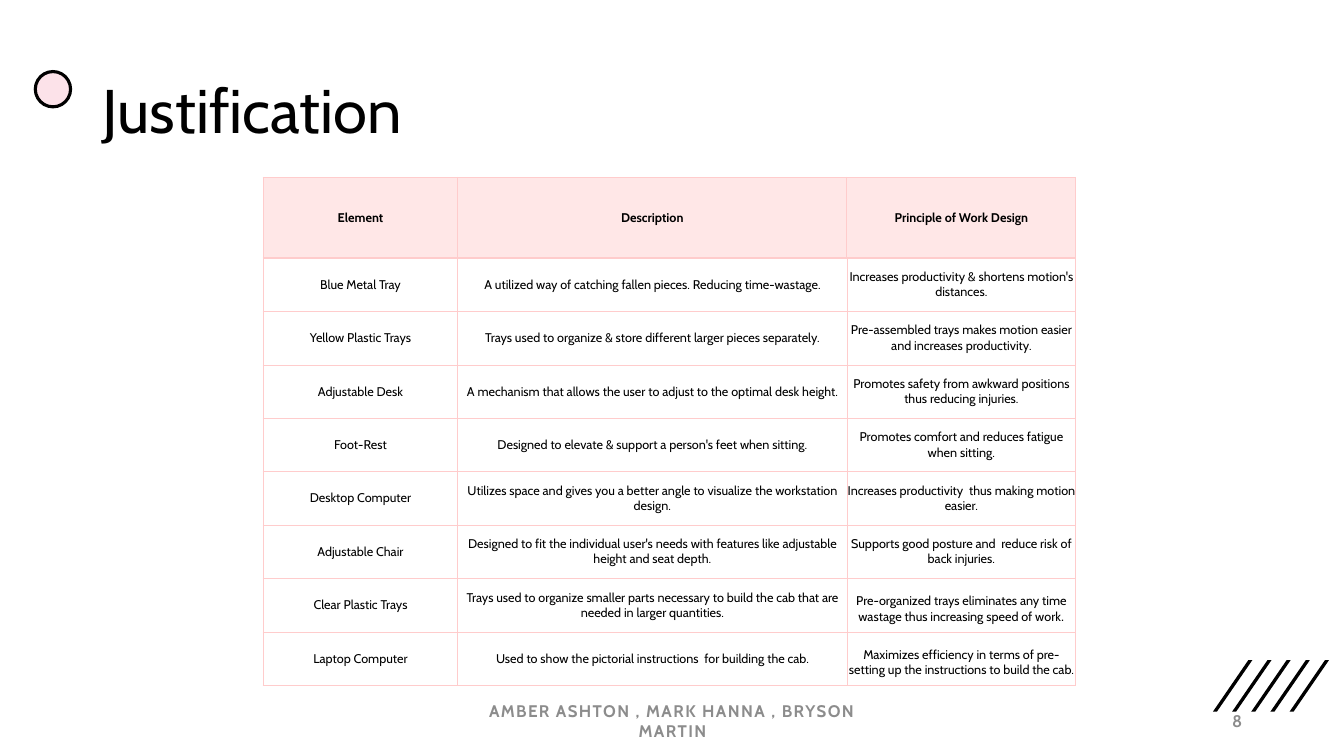
import pptx
import pptx.dml.color
import pptx.enum.shapes
import pptx.enum.text
import pptx.oxml
import pptx.oxml.ns
import pptx.util

PX = 9144  # 100 px to the inch
PINK_LINE = "FFCCCC"
MIDDLE = pptx.enum.text.MSO_ANCHOR.MIDDLE
TOP = pptx.enum.text.MSO_ANCHOR.TOP
LEFT, CENTER, RIGHT = (pptx.enum.text.PP_ALIGN.LEFT, pptx.enum.text.PP_ALIGN.CENTER,
                       pptx.enum.text.PP_ALIGN.RIGHT)


def rgb(color):
    return pptx.dml.color.RGBColor.from_string(color)


def add_run(paragraph, text, size, color="000000", bold=False, font="Cabin"):
    run = paragraph.add_run()
    run.text = text
    run.font.name = font
    run.font.size = pptx.util.Pt(size)
    run.font.bold = bold
    run.font.color.rgb = rgb(color)
    return run


deck = pptx.Presentation()
deck.slide_width, deck.slide_height = 1333 * PX, 750 * PX
slide = deck.slides.add_slide(deck.slide_layouts[6])
shapes = slide.shapes

# Slanted stripes in the lower right corner
for left in range(1203, 1203 + 5 * 19, 19):
    outline = shapes.build_freeform(left + 4, 706, scale=PX)
    outline.add_line_segments([(left, 706), (left + 35, 655), (left + 39, 655)], close=True)
    stripe = outline.convert_to_shape()
    stripe.shadow.inherit = False
    stripe.fill.solid()
    stripe.fill.fore_color.rgb = rgb("000000")
    stripe.line.fill.background()

dot = shapes.add_shape(pptx.enum.shapes.MSO_SHAPE.OVAL, 35 * PX, 71 * PX, 35 * PX, 35 * PX)
dot.shadow.inherit = False
dot.fill.solid()
dot.fill.fore_color.rgb = rgb("FCE2E9")
dot.line.color.rgb = rgb("000000")
dot.line.width = pptx.util.Pt(2.25)

# Title, footer and slide number
labels = [
    ("Justification", (92, 40, 1150, 145), LEFT, 44, "000000", False),
    ("AMBER ASHTON , MARK HANNA , BRYSON MARTIN", (442, 695, 450, 40), CENTER, 12, "8C8C8C", True),
    ("8", (942, 695, 300, 40), RIGHT, 12, "8C8C8C", True),
]
for text, box, align, size, color, is_footer in labels:
    frame = shapes.add_textbox(*(length * PX for length in box)).text_frame
    frame.word_wrap = True
    frame.vertical_anchor = MIDDLE
    paragraph = frame.paragraphs[0]
    paragraph.alignment = align
    run = add_run(paragraph, text, size, color, bold=is_footer)
    if is_footer:
        run.font._element.set("spc", "100")
    else:
        paragraph.line_spacing = 0.9

# Justification table
elements = [
    ("Element", "Description", "Principle of Work Design"),
    ("Blue Metal Tray",
     "A utilized way of catching fallen pieces. Reducing time-wastage.",
     "Increases productivity & shortens motion's distances."),
    ("Yellow Plastic Trays",
     "Trays used to organize & store different larger pieces separately.",
     "Pre-assembled trays makes motion easier and increases productivity."),
    ("Adjustable Desk",
     "A mechanism that allows the user to adjust to the optimal desk height.",
     "Promotes safety from awkward positions thus reducing injuries."),
    ("Foot-Rest",
     "Designed to elevate & support a person's feet when sitting.",
     "Promotes comfort and reduces fatigue when sitting."),
    ("Desktop Computer",
     "Utilizes space and gives you a better angle to visualize the workstation design.",
     "Increases productivity  thus making motion easier."),
    ("Adjustable Chair",
     "Designed to fit the individual user's needs with features like adjustable height and seat depth.",
     "Supports good posture and  reduce risk of back injuries."),
    ("Clear Plastic Trays",
     "Trays used to organize smaller parts necessary to build the cab that are needed in larger quantities.",
     "Pre-organized trays eliminates any time wastage thus increasing speed of work"),
    ("Laptop Computer",
     "Used to show the pictorial instructions  for building the cab.",
     "Maximizes efficiency in terms of pre-setting up the instructions to build the cab."),
]
column_widths = [193, 386, 227]
row_heights = [80] + [53] * 8
last_row, last_column = len(row_heights) - 1, len(column_widths) - 1

table = shapes.add_table(len(row_heights), len(column_widths), 261 * PX, 176 * PX,
                         sum(column_widths) * PX, sum(row_heights) * PX).table
table.first_row = table.horz_banding = False
for column, width in zip(table.columns, column_widths):
    column.width = width * PX
for row, height in zip(table.rows, row_heights):
    row.height = height * PX

for r, texts in enumerate(elements):
    for c, text in enumerate(texts):
        cell = table.cell(r, c)
        cell.margin_left = cell.margin_right = cell.margin_top = cell.margin_bottom = 0
        cell.vertical_anchor = MIDDLE
        paragraph = cell.text_frame.paragraphs[0]
        paragraph.alignment = CENTER
        add_run(paragraph, text, 9, bold=r == 0)
        thick_edges = {"lnL": r == 0 or c == 0, "lnR": r == 0 or c == last_column,
                       "lnT": r <= 1, "lnB": r in (0, last_row)}
        properties = cell._tc.get_or_add_tcPr()
        for edge, thick in thick_edges.items():
            properties.append(pptx.oxml.parse_xml(
                f'<a:{edge} {pptx.oxml.ns.nsdecls("a")} w="{12700 if thick else 6350}">'
                f'<a:solidFill><a:srgbClr val="{PINK_LINE}"/></a:solidFill></a:{edge}>'))
        cell.fill.solid()
        cell.fill.fore_color.rgb = rgb("FFE7E7" if r == 0 else "FFFFFF")

# The last two principles hang one line below the top of their cells
for r in (last_row - 1, last_row):
    principle = table.cell(r, last_column)
    principle.vertical_anchor = TOP
    principle.margin_top = 15 * PX
add_run(table.cell(last_row - 1, last_column).text_frame.paragraphs[0], ".", 9, font="Arial")

deck.save("out.pptx")
